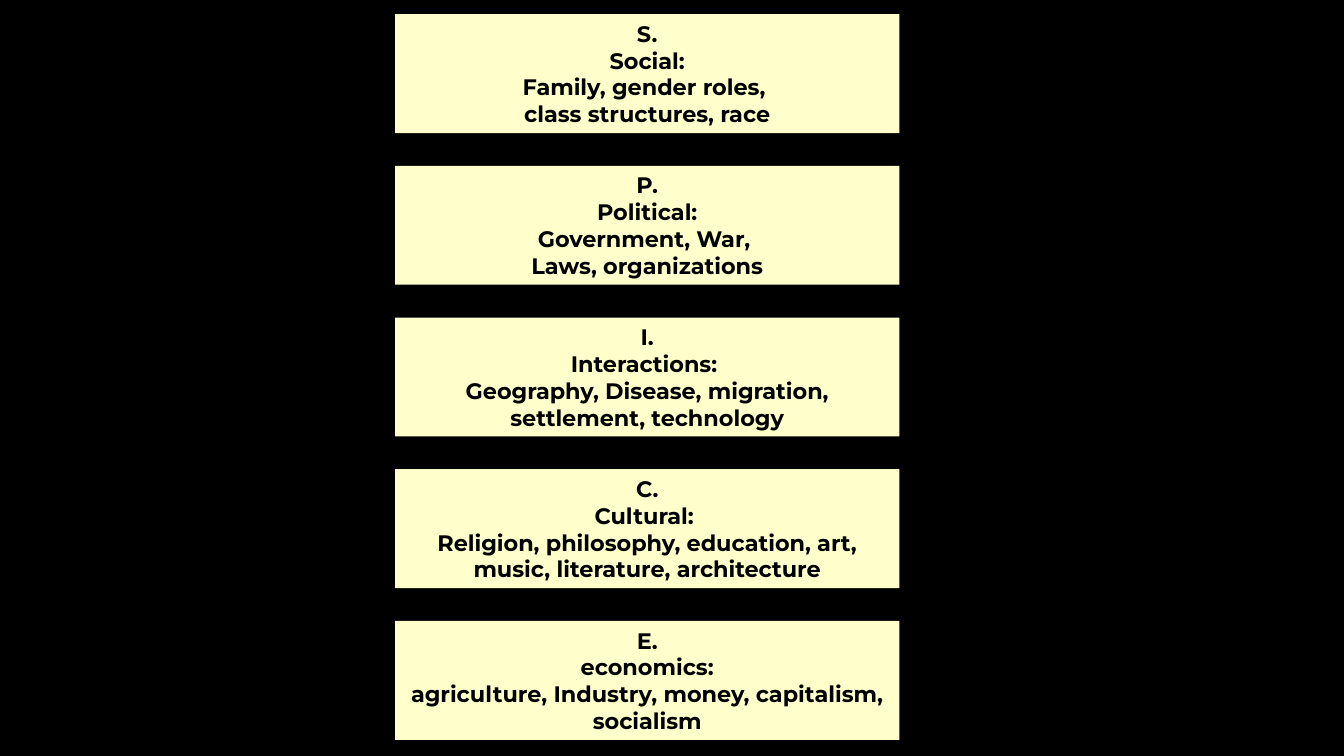
import copy

import pptx
import pptx.dml.color
import pptx.enum.shapes
import pptx.enum.text
import pptx.oxml
import pptx.oxml.ns
import pptx.util

BLACK = pptx.dml.color.RGBColor(0x00, 0x00, 0x00)
CREAM = pptx.dml.color.RGBColor(0xFF, 0xFF, 0xCC)

# Themes: paragraphs (\v breaks a line within one), and whether letters are outlined
THEMES = [
    (["S.\vSocial:", "Family, gender roles, ", "class structures, race"], True),
    (["P.\vPolitical:", "Government, War, ", "Laws, organizations"], True),
    (["I.\vInteractions: \vGeography, Disease, migration, settlement, technology"], False),
    (["C.\vCultural: \vReligion, philosophy, education, art, music, literature, architecture"], False),
    (["E.\veconomics:\vagriculture, Industry, money, capitalism, socialism"], False),
]


class ThemeSlide:
    """Style and current slide, with a single column of evenly spaced rows."""

    LEFT, TOP = 3.92, 0.14
    WIDTH, HEIGHT = 5, 1.18
    ROW_PITCH = 1.505
    FONT = {"name": "Montserrat", "size": pptx.util.Pt(16), "bold": True}
    FRAME = {
        "word_wrap": True,
        "vertical_anchor": pptx.enum.text.MSO_ANCHOR.MIDDLE,
        "auto_size": pptx.enum.text.MSO_AUTO_SIZE.SHAPE_TO_FIT_TEXT,
    }
    OUTLINE = (
        f'<a:ln {pptx.oxml.ns.nsdecls("a")} w="{pptx.util.Pt(0.75)}">'
        f'<a:solidFill><a:srgbClr val="{BLACK}"/></a:solidFill></a:ln>'
    )

    def __init__(self, deck):
        self.slide = deck.slides.add_slide(deck.slide_layouts[6])
        backdrop = self.slide.background.fill
        backdrop.solid()
        backdrop.fore_color.rgb = BLACK

    def card(self, row, paragraphs, outlined):
        bounds = (self.LEFT, self.TOP + row * self.ROW_PITCH, self.WIDTH, self.HEIGHT)
        card = self.slide.shapes.add_shape(
            pptx.enum.shapes.MSO_SHAPE.RECTANGLE, *map(pptx.util.Inches, bounds))
        card.shadow.inherit = False
        card.fill.solid()
        card.fill.fore_color.rgb = CREAM
        card.line.fill.background()
        for name, value in self.FRAME.items():
            setattr(card.text_frame, name, value)
        card.text_frame.text = "\n".join(paragraphs)
        for paragraph in card.text_frame.paragraphs:
            self.style(paragraph, outlined)

    def style(self, paragraph, outlined):
        paragraph.alignment = pptx.enum.text.PP_ALIGN.CENTER
        for run in paragraph.runs:
            for name, value in self.FONT.items():
                setattr(run.font, name, value)
            run.font.color.rgb = BLACK
            letters = run._r.get_or_add_rPr()
            if outlined:
                letters.insert(0, pptx.oxml.parse_xml(self.OUTLINE))
        # Line breaks take the size of the text around them
        for line_break in paragraph._p.findall(pptx.oxml.ns.qn("a:br")):
            line_break.insert(0, copy.deepcopy(letters))


def main():
    deck = pptx.Presentation()
    deck.slide_width = pptx.util.Inches(13.33)
    deck.slide_height = pptx.util.Inches(7.5)

    # One card per theme, from top to bottom
    themes = ThemeSlide(deck)
    for row, (paragraphs, outlined) in enumerate(THEMES):
        themes.card(row, paragraphs, outlined)

    deck.save("out.pptx")


if __name__ == "__main__":
    main()
